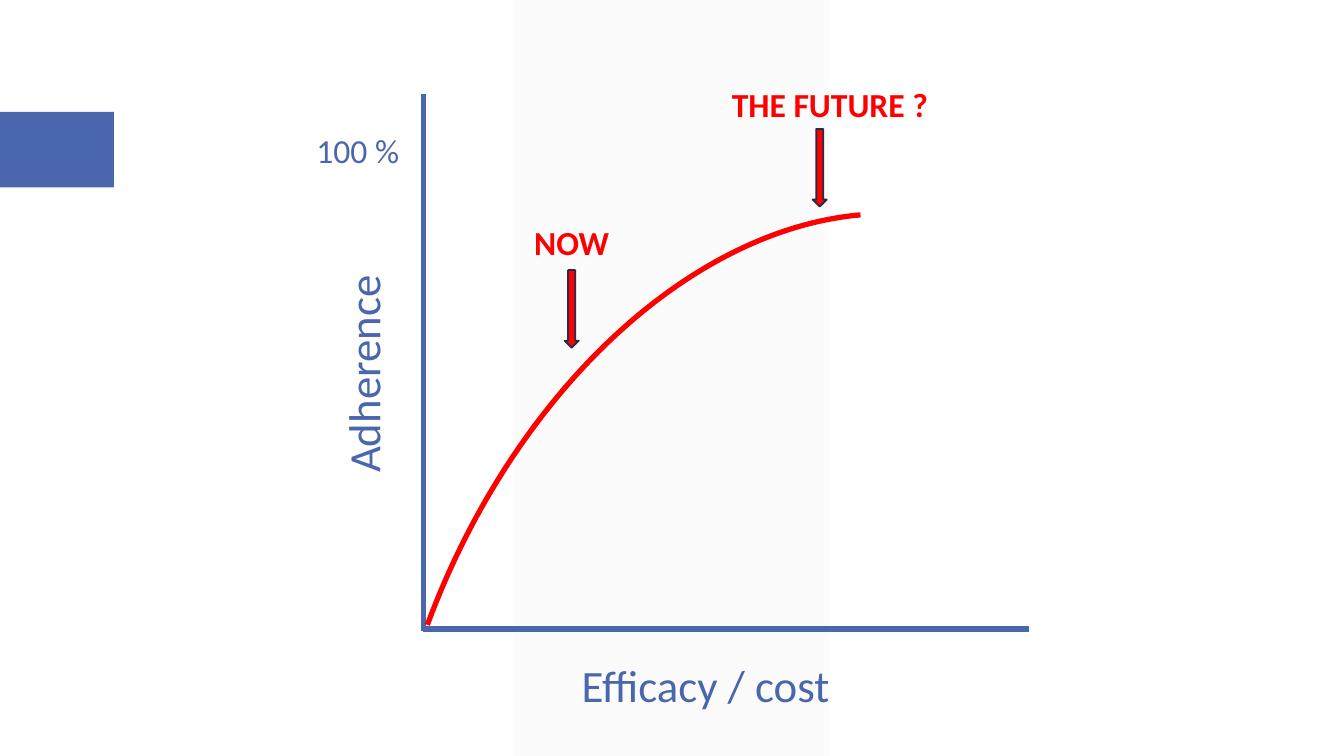
from dataclasses import dataclass

from lxml.etree import SubElement
from pptx import Presentation
from pptx.dml.color import RGBColor
from pptx.enum.shapes import MSO_CONNECTOR, MSO_SHAPE
from pptx.oxml.ns import qn
from pptx.util import Emu, Pt

EMU_PER_PX = 9144  # 100 px to the inch


@dataclass(frozen=True)
class Theme:
    font: str = "Calibri"
    blue: str = "4A66AC"
    navy: str = "202D4B"
    red: str = "FF0000"
    band: str = "F2F2F2"
    band_alpha: int = 30
    axis_title: int = 32
    label: int = 24
    axis_width: float = 4
    curve_width: float = 3.75
    arrow_width: float = 1.25


@dataclass(frozen=True)
class Box:
    left: int
    top: int
    width: int
    height: int

    def inner(self, left, top, width, height):
        """A box placed relative to this one."""
        return Box(self.left + left, self.top + top, width, height)

    def emu(self):
        return [px(n) for n in (self.left, self.top, self.width, self.height)]


THEME = Theme()


def px(length):
    return Emu(length * EMU_PER_PX)


def color(value):
    return RGBColor.from_string(value)


def add_figure(shapes, kind, box, fill=None, line=None, width=0):
    shape = shapes.add_shape(kind, *box.emu())
    shape.shadow.inherit = False
    if fill:
        shape.fill.solid()
        shape.fill.fore_color.rgb = color(fill)
    else:
        shape.fill.background()
    if line:
        shape.line.color.rgb = color(line)
        shape.line.width = Pt(width)
    else:
        shape.line.fill.background()
    return shape


def add_label(shapes, box, text, size, ink, bold=False):
    label = shapes.add_textbox(*box.emu())
    label.text_frame.word_wrap = True
    run = label.text_frame.paragraphs[0].add_run()
    run.text = text
    run.font.name = THEME.font
    run.font.size = Pt(size)
    run.font.bold = bold
    run.font.color.rgb = color(ink)
    return label


def add_axis(shapes, x1, y1, x2, y2):
    axis = shapes.add_connector(MSO_CONNECTOR.STRAIGHT, px(x1), px(y1), px(x2), px(y2))
    axis.line.color.rgb = color(THEME.blue)
    axis.line.width = Pt(THEME.axis_width)
    SubElement(axis._element.spPr, qn("a:effectLst"))


def add_backdrop(shapes, box):
    # Pale vertical band
    band = add_figure(shapes, MSO_SHAPE.PARALLELOGRAM, box.inner(510, 0, 312, box.height), THEME.band)
    band.adjustments[0] = 0
    tint = band._element.spPr.find(qn("a:solidFill"))[0]
    SubElement(tint, qn("a:alpha")).set("val", str(THEME.band_alpha * 1000))

    # Blue tab at the left edge
    add_figure(shapes, MSO_SHAPE.RECTANGLE, box.inner(0, 111, 113, 75), THEME.blue)


def add_plot(shapes, box):
    # Axes; the vertical one runs on to cover the corner
    bottom = box.top + box.height
    add_axis(shapes, box.left, box.top, box.left, bottom + 2)
    add_axis(shapes, box.left + box.width, bottom, box.left, bottom)

    # Axis titles
    add_label(shapes, box.inner(147, 555, 349, 64), "Efficacy / cost", THEME.axis_title, THEME.blue)
    title = add_label(shapes, box.inner(-179, 235, 238, 64), "Adherence", THEME.axis_title, THEME.blue)
    title.rotation = 270

    # Adherence curve: start and end angles in degrees, scaled to adjustment units
    curve = add_figure(shapes, MSO_SHAPE.ARC, box.inner(-200, 281, 1114, 753),
                       line=THEME.red, width=THEME.curve_width)
    for index, degrees in enumerate((270, 347.8)):
        curve.adjustments[index] = degrees * 0.6
    curve.rotation = 290.3

    # Upper limit
    add_label(shapes, box.inner(-116, 31, 113, 50), "100 %", THEME.label, THEME.blue)


def add_marker(shapes, box, text, arrow_left, arrow_top):
    add_label(shapes, box.inner(0, 0, box.width, 50), text, THEME.label, THEME.red, bold=True)
    add_figure(shapes, MSO_SHAPE.DOWN_ARROW, box.inner(arrow_left, arrow_top, 14, 77),
               THEME.red, THEME.navy, THEME.arrow_width)


def main():
    presentation = Presentation()
    page = Box(0, 0, 1333, 750)
    presentation.slide_width = px(page.width)
    presentation.slide_height = px(page.height)
    slide = presentation.slides.add_slide(presentation.slide_layouts[6])

    add_backdrop(slide.shapes, page)
    add_plot(slide.shapes, Box(420, 93, 601, 531))

    # Points in time on the curve
    add_marker(slide.shapes, Box(520, 215, 113, 130), "NOW", 40, 53)
    future = slide.shapes.add_group_shape()
    add_marker(future.shapes, Box(716, 78, 236, 127), "THE FUTURE ?", 90, 50)

    presentation.save("out.pptx")


if __name__ == "__main__":
    main()
